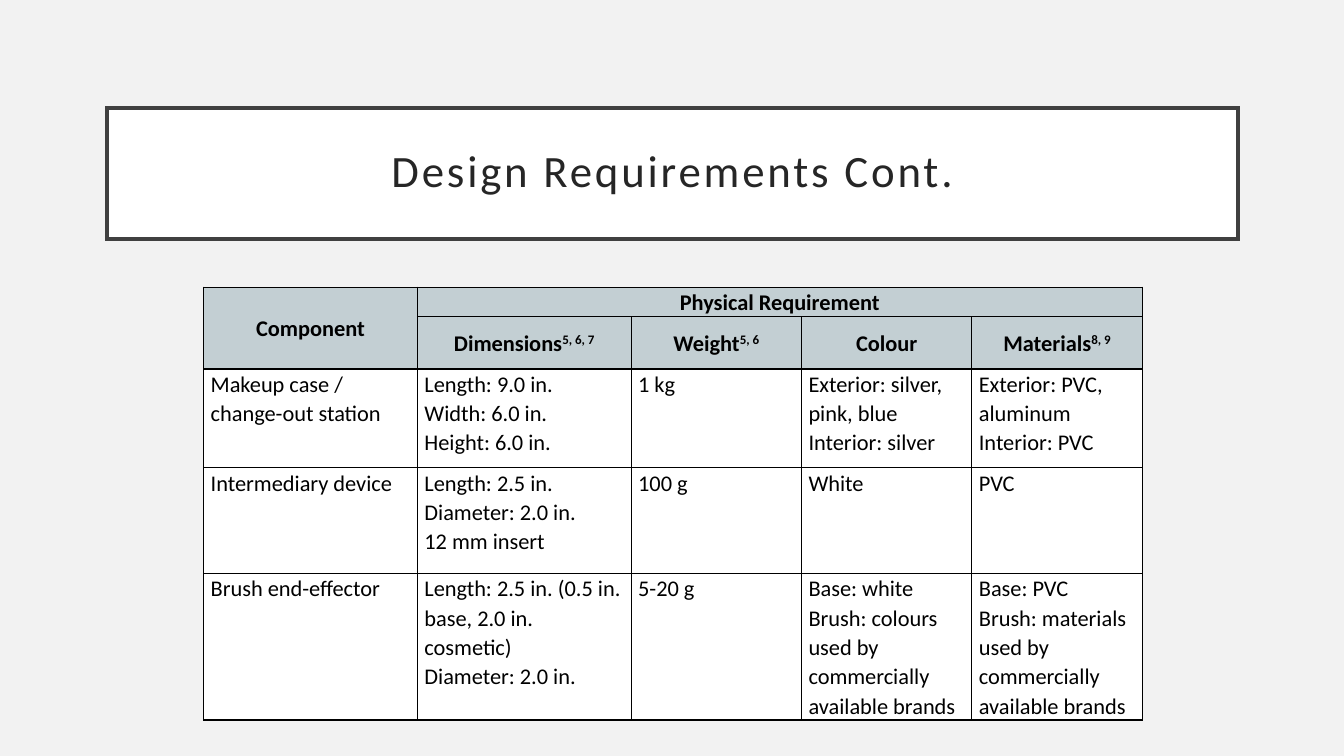
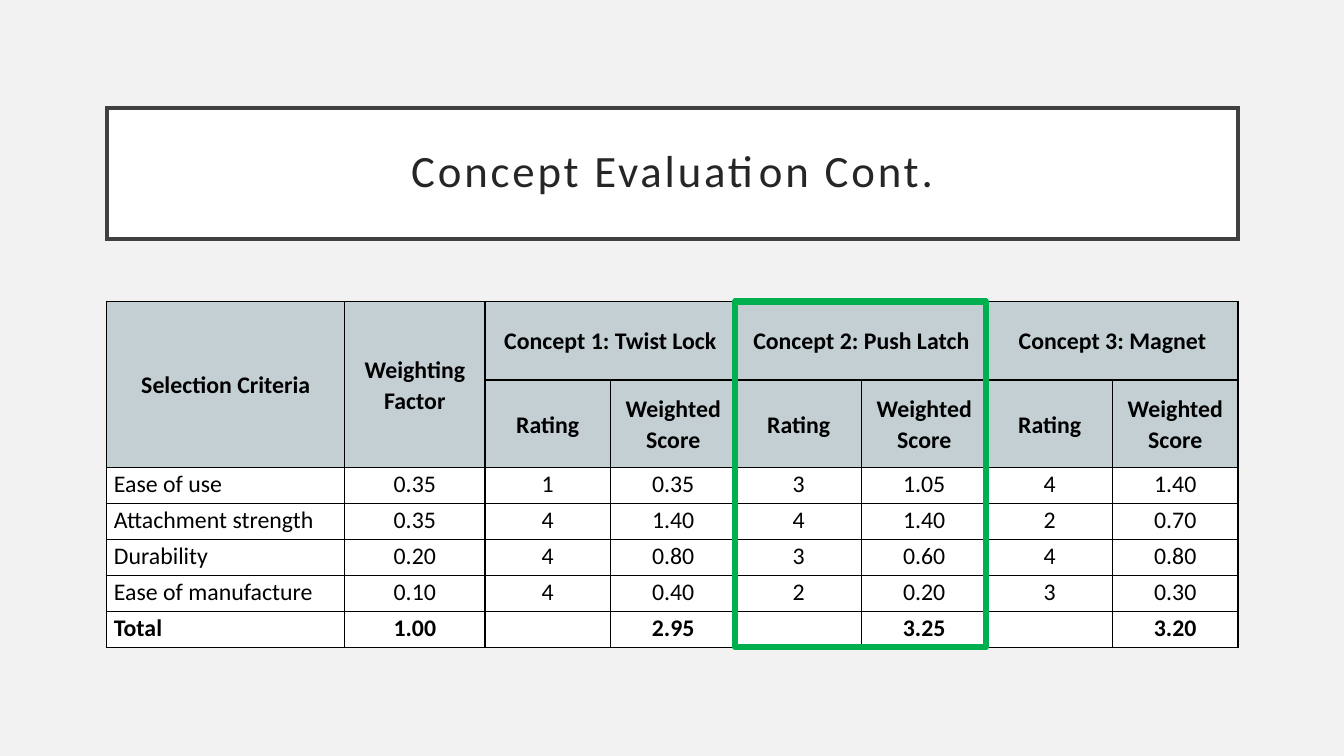
from pptx import Presentation
from pptx.dml.color import RGBColor
from pptx.enum.shapes import MSO_SHAPE
from pptx.enum.text import MSO_ANCHOR, PP_ALIGN
from pptx.oxml import parse_xml
from pptx.oxml.ns import nsdecls
from pptx.util import Inches, Pt

FONT = "Calibri"
BACKGROUND, WHITE, BLACK = "F2F2F2", "FFFFFF", "000000"
TITLE_TEXT, TITLE_LINE = "262626", "404040"
HEADER_FILL, HIGHLIGHT = "C3CFD3", "00B050"
CONTENT_LEFT, CONTENT_WIDTH = 1.06, 11.22


def paint(fill, color):
    fill.solid()
    fill.fore_color.rgb = RGBColor.from_string(color)


def write(frame, text, size, color, bold, align, line_spacing, letter_spacing=0):
    """Newlines part paragraphs; text after ^ is superscript."""
    frame.word_wrap = True
    for index, line in enumerate(text.split("\n")):
        para = frame.paragraphs[0] if index == 0 else frame.add_paragraph()
        para.alignment = align
        para.line_spacing = line_spacing
        for raised, words in enumerate(line.split("^")):
            if not words:
                continue
            span = para.add_run()
            span.text = words
            span.font.name = FONT
            span.font.size = Pt(size)
            span.font.bold = bold
            paint(span.font.fill, color)
            properties = span._r.get_or_add_rPr()
            if raised:
                properties.set("baseline", "30000")
            if letter_spacing:
                properties.set("spc", str(letter_spacing * 100))


# Contents: a None cell is covered by a merged neighbour
pages = [
    {
        "title": "Design Requirements Cont.",
        "left": 2.02, "top": 2.85, "size": 16,
        "columns": [2.12] * 2 + [1.69] * 3,
        "rows": [0.25, 0.52, 0.98, 1.05, 0.78],
        "merges": [(0, 0, 1, 0), (0, 1, 0, 4)],
        "centred_from": 5,
        "bold_rows": (0, 1),
        "cells": [
            ["Component", "Physical Requirement", None, None, None],
            [None, "Dimensions^5, 6, 7", "Weight^5, 6", "Colour", "Materials^8, 9"],
            ["Makeup case / change-out station",
             "Length: 9.0 in.\nWidth: 6.0 in.\nHeight: 6.0 in.",
             "1 kg",
             "Exterior: silver, pink, blue\nInterior: silver",
             "Exterior: PVC, aluminum\nInterior: PVC"],
            ["Intermediary device",
             "Length: 2.5 in.\nDiameter: 2.0 in.\n12 mm insert",
             "100 g", "White", "PVC"],
            ["Brush end-effector",
             "Length: 2.5 in. (0.5 in. base, 2.0 in. cosmetic)\nDiameter: 2.0 in.",
             "5-20 g",
             "Base: white\nBrush: colours used by commercially available brands",
             "Base: PVC\nBrush: materials used by commercially available brands"],
        ],
    },
    {
        "title": "Concept Evaluation Cont.",
        "left": CONTENT_LEFT, "top": 2.99, "size": 17,
        "columns": [2.36, 1.39] + [1.245] * 6,
        "rows": [0.78, 0.87] + [0.357] * 5,
        "merges": [(0, 0, 1, 0), (0, 1, 1, 1), (0, 2, 0, 3), (0, 4, 0, 5), (0, 6, 0, 7)],
        "centred_from": 1,
        "bold_rows": (0, 1, 6),
        "cells": [
            ["Selection Criteria", "Weighting Factor", "Concept 1: Twist Lock", None,
             "Concept 2: Push Latch", None, "Concept 3: Magnet", None],
            [None, None] + ["Rating", "Weighted Score"] * 3,
            ["Ease of use", "0.35", "1", "0.35", "3", "1.05", "4", "1.40"],
            ["Attachment strength", "0.35", "4", "1.40", "4", "1.40", "2", "0.70"],
            ["Durability", "0.20", "4", "0.80", "3", "0.60", "4", "0.80"],
            ["Ease of manufacture", "0.10", "4", "0.40", "2", "0.20", "3", "0.30"],
            ["Total", "1.00", "", "2.95", "", "3.25", "", "3.20"],
        ],
    },
]

deck = Presentation()
deck.slide_width, deck.slide_height = Inches(13.33), Inches(7.5)
paint(deck.slide_master.background.fill, BACKGROUND)

for content in pages:
    page = deck.slides.add_slide(deck.slide_layouts[6])

    # Title box
    box = page.shapes.add_shape(MSO_SHAPE.RECTANGLE, Inches(CONTENT_LEFT), Inches(1.07),
                                Inches(CONTENT_WIDTH), Inches(1.3))
    box.shadow.inherit = False
    paint(box.fill, WHITE)
    paint(box.line.fill, TITLE_LINE)
    box.line.width = Pt(2.5)
    box.line._get_or_add_ln().append(parse_xml(f'<a:miter {nsdecls("a")} lim="800000"/>'))
    frame = box.text_frame
    frame.vertical_anchor = MSO_ANCHOR.MIDDLE
    frame.margin_left = frame.margin_right = Inches(0.2)
    frame.margin_top = frame.margin_bottom = Inches(0.2)
    write(frame, content["title"], 32, TITLE_TEXT, False, PP_ALIGN.CENTER, 0.9, 2)

    # Table grid
    columns, rows = content["columns"], content["rows"]
    table = page.shapes.add_table(len(rows), len(columns), Inches(content["left"]),
                                  Inches(content["top"]), Inches(sum(columns)),
                                  Inches(sum(rows))).table
    table.first_row = table.horz_banding = False
    for column, width in zip(table.columns, columns):
        column.width = Inches(width)
    for row, height in zip(table.rows, rows):
        row.height = Inches(height)
    for top, left, bottom, right in content["merges"]:
        table.cell(top, left).merge(table.cell(bottom, right))

    # Table cells
    for row_index, texts in enumerate(content["cells"]):
        header = row_index < 2
        for column_index, text in enumerate(texts):
            cell = table.cell(row_index, column_index)
            cell.margin_left = cell.margin_right = Inches(0.07)
            cell.margin_top = cell.margin_bottom = 0
            cell.vertical_anchor = MSO_ANCHOR.MIDDLE if header else MSO_ANCHOR.TOP
            for side in "LRTB":
                cell._tc.get_or_add_tcPr().append(parse_xml(
                    f'<a:ln{side} {nsdecls("a")} w="{Pt(1)}"><a:solidFill>'
                    f'<a:srgbClr val="{BLACK}"/></a:solidFill></a:ln{side}>'))
            paint(cell.fill, HEADER_FILL if header else WHITE)
            if text:
                centred = header or column_index >= content["centred_from"]
                write(cell.text_frame, text, content["size"], BLACK,
                      row_index in content["bold_rows"],
                      PP_ALIGN.CENTER if centred else PP_ALIGN.LEFT, 1.07)

# Frame around the winning concept on the last page
winner = page.shapes.add_shape(MSO_SHAPE.RECTANGLE, Inches(7.29), Inches(2.99),
                               Inches(2.49), Inches(3.43))
winner.shadow.inherit = False
winner.fill.background()
paint(winner.line.fill, HIGHLIGHT)
winner.line.width = Pt(4.5)

deck.save("out.pptx")
